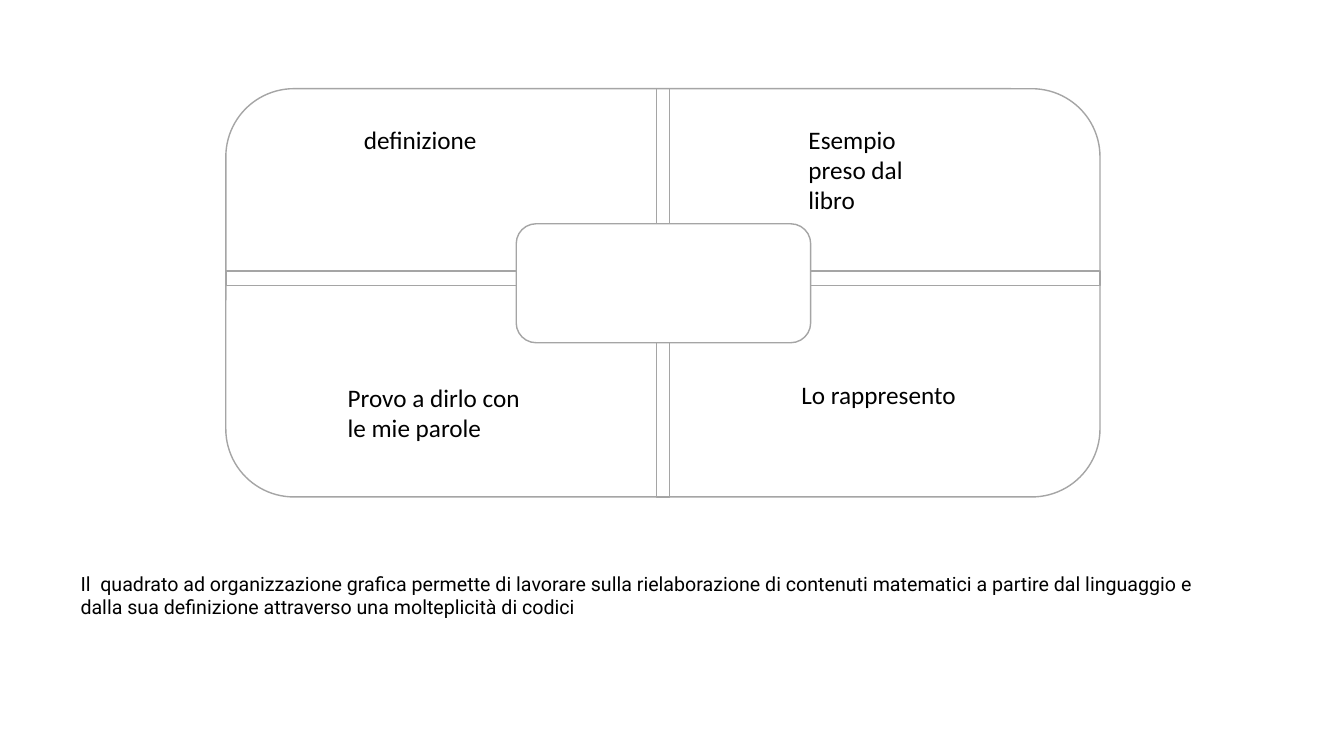
from pptx import Presentation
from pptx.dml.color import RGBColor
from pptx.enum.shapes import MSO_SHAPE
from pptx.enum.text import MSO_AUTO_SIZE
from pptx.util import Inches, Pt

RECT = MSO_SHAPE.RECTANGLE
ROUNDED = MSO_SHAPE.ROUNDED_RECTANGLE
FIT_TEXT = MSO_AUTO_SIZE.SHAPE_TO_FIT_TEXT
GREY = RGBColor(0xA5, 0xA5, 0xA5)
BLACK = RGBColor(0, 0, 0)
LABEL = {"name": "Calibri", "size": Pt(18)}
CAPTION = {"name": "Roboto", "size": Pt(14)}


class Board:
    """Draws outlined shapes and text on one slide in a shared style."""

    def __init__(self, slide, line_color, text_color):
        self.s = slide
        self.line_color = line_color
        self.text_color = text_color

    def outline(self, kind, *box):
        sp = self.s.shapes.add_shape(kind, *map(Inches, box))
        sp.shadow.inherit = False
        sp.fill.background()
        sp.line.color.rgb = self.line_color
        sp.line.width = Pt(1)

    def text(self, text, style, *box):
        tf = self.s.shapes.add_textbox(*map(Inches, box)).text_frame
        tf.word_wrap = True
        tf.auto_size = FIT_TEXT
        r = tf.paragraphs[0].add_run()
        r.text = text
        r.font.color.rgb = self.text_color
        for name, value in style.items():
            setattr(r.font, name, value)


def main():
    prs = Presentation()
    prs.slide_width, prs.slide_height = Inches(13.33), Inches(7.5)
    board = Board(prs.slides.add_slide(prs.slide_layouts[6]), GREY, BLACK)

    left, top, width, height = frame = (2.24, 0.88, 8.67, 4.05)
    hub_left, hub_top, hub_width, hub_height = hub = (5.12, 2.22, 2.92, 1.18)
    right, bottom = left + width, top + height
    hub_right, hub_bottom = hub_left + hub_width, hub_top + hub_height
    for box in (hub, frame):
        board.outline(ROUNDED, *box)

    row_y, row_height = 2.69, 0.14
    for start, end in ((left, hub_left), (hub_right, right)):
        board.outline(RECT, start, row_y, end - start, row_height)

    column_x, column_width = 6.51, 0.13
    for start, end in ((top, hub_top), (hub_bottom, bottom)):
        board.outline(RECT, column_x, start, column_width, end - start)

    for label, *box in (
        ("definizione", 3.51, 1.18, 1.41, 0.4),
        ("Esempio preso dal libro", 7.92, 1.18, 1.58, 1.01),
        ("Provo a dirlo con le mie parole", 3.35, 3.74, 2.06, 0.71),
        ("Lo rappresento", 7.85, 3.71, 2.06, 0.4),
    ):
        board.text(label, LABEL, *box)

    board.text(
        "Il  quadrato ad organizzazione grafica permette di lavorare sulla "
        "rielaborazione di contenuti matematici a partire dal linguaggio e "
        "dalla sua definizione attraverso una molteplicità di codici",
        CAPTION, 0.7, 5.62, 11.45, 0.57)

    prs.save("out.pptx")


if __name__ == "__main__":
    main()
